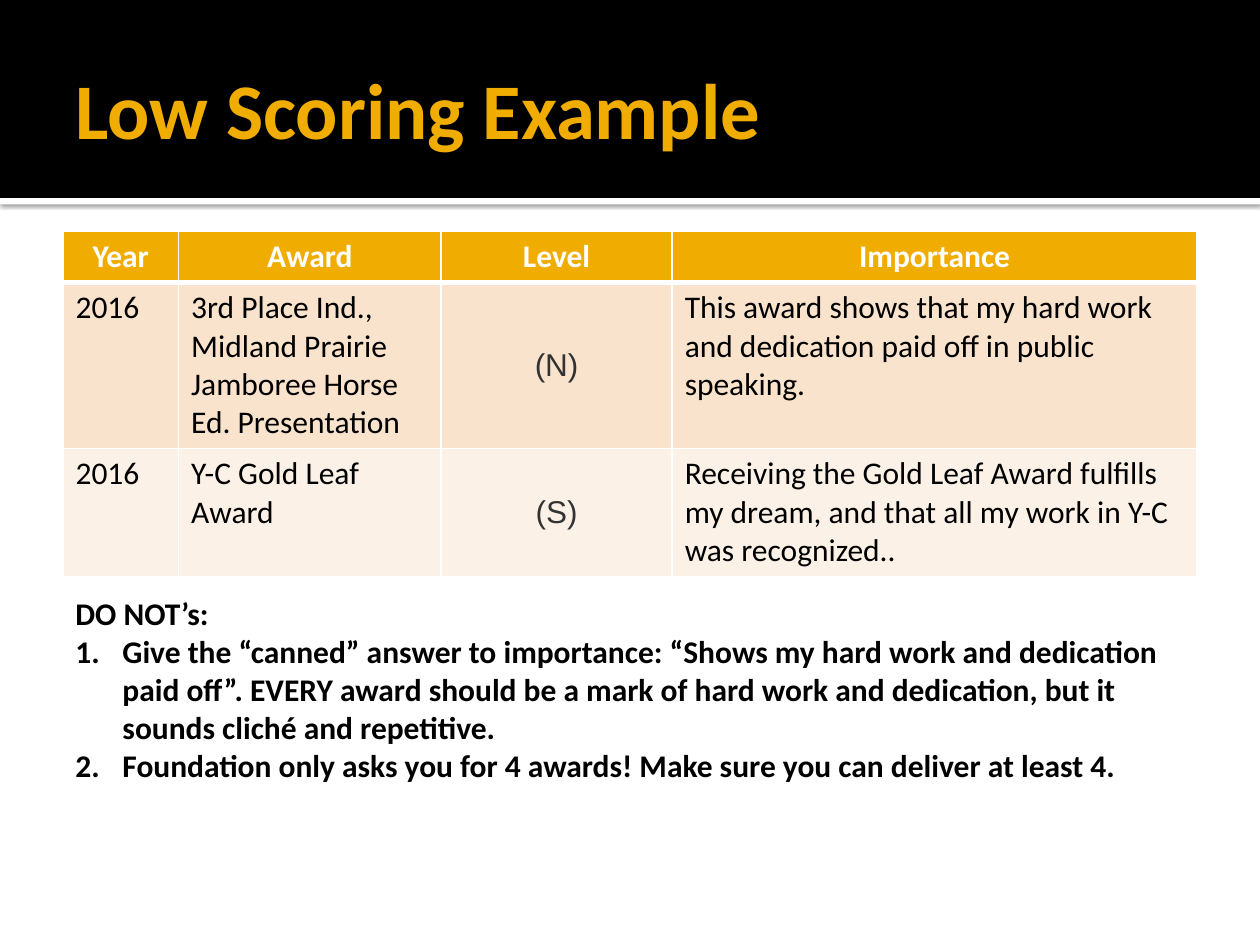
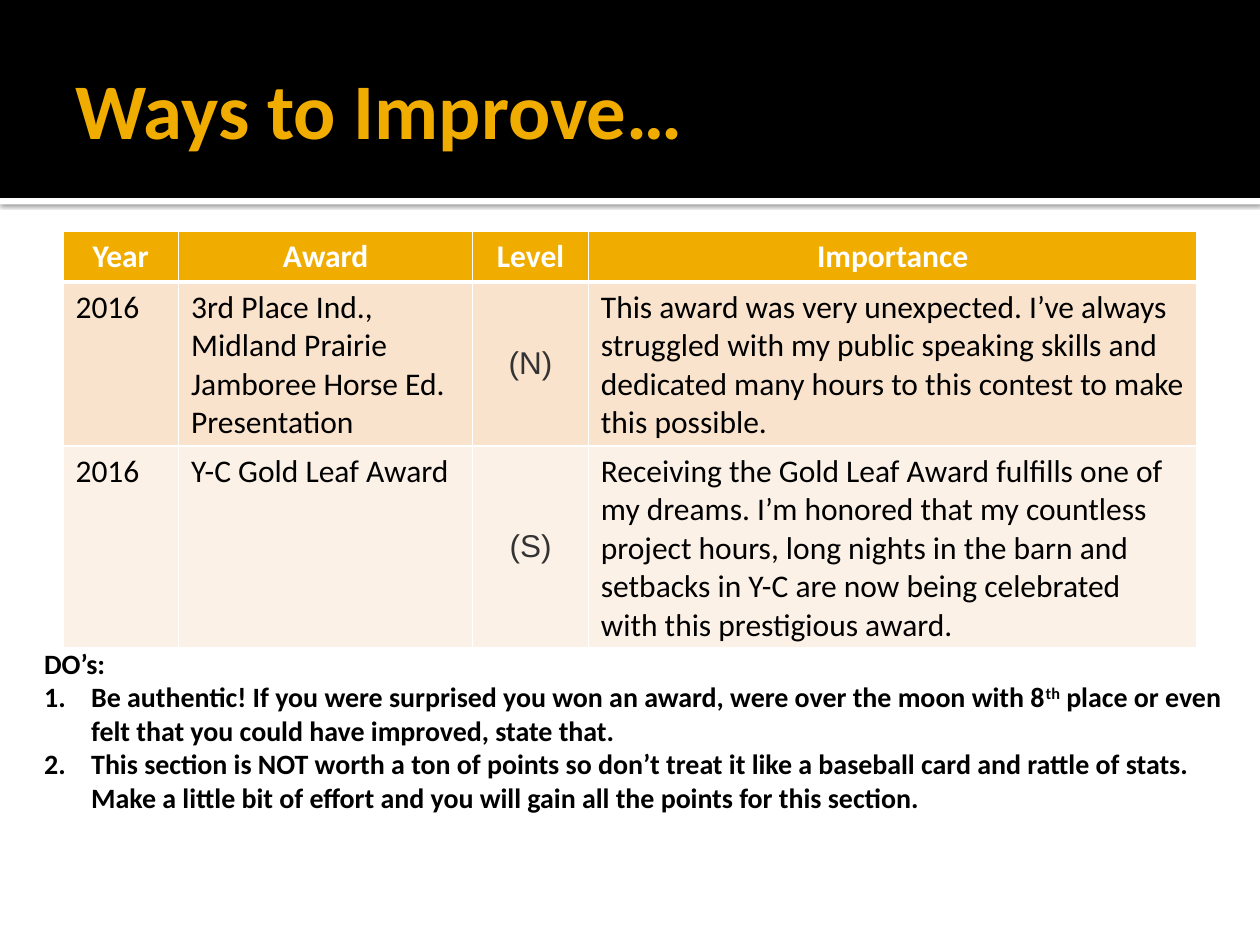
from lxml import etree
from pptx import Presentation
from pptx import util as u
from pptx.dml.color import RGBColor
from pptx.enum import shapes, text
from pptx.oxml import ns

BLACK = RGBColor(0x00, 0x00, 0x00)
WHITE = RGBColor(0xFF, 0xFF, 0xFF)
GOLD = RGBColor(0xF0, 0xAD, 0x00)
GREY = RGBColor(0x33, 0x33, 0x33)
ROW_FILLS = (RGBColor(0xF9, 0xE3, 0xCC), RGBColor(0xFC, 0xF1, 0xE7))

SLIDE_WIDTH, SLIDE_HEIGHT = u.Cm(25.4), u.Cm(19.05)
MARGIN, CONTENT_WIDTH = u.Cm(1.27), u.Cm(22.86)
BAND_HEIGHT, STRIP_HEIGHT = u.Cm(3.99), u.Cm(0.13)
TABLE_TOP = u.Cm(4.67)
LIST_INDENT = u.Cm(0.95)

HEADINGS = ("Year", "Award", "Level", "Importance")
AWARDS = (
    ("2016", "3rd Place Ind., Midland Prairie Jamboree Horse Ed. Presentation", "(N)"),
    ("2016", "Y-C Gold Leaf Award", "(S)"),
)


def add_xml(parent, tag, **attributes):
    """Append a DrawingML element and return it."""
    return etree.SubElement(parent, ns.qn(tag), attributes)


def add_run(paragraph, content, size, color, bold=False, font="Calibri", raised=False):
    """Add one formatted run, raised for a superscript."""
    run = paragraph.add_run()
    run.text = content
    run.font.name = font
    run.font.size = u.Pt(size)
    run.font.bold = bold
    run.font.color.rgb = color
    if raised:
        run._r.get_or_add_rPr().set("baseline", "30000")


def add_band(slide, top, height, color):
    """Add a plain full-width rectangle."""
    band = slide.shapes.add_shape(
        shapes.MSO_SHAPE.RECTANGLE, 0, top, SLIDE_WIDTH, height)
    band.shadow.inherit = False
    band.fill.solid()
    band.fill.fore_color.rgb = color
    band.line.fill.background()
    return band


def add_drop_shadow(shape):
    """Cast a soft shadow straight down."""
    effects = shape._element.spPr.find(ns.qn("a:effectLst"))
    shadow = add_xml(effects, "a:outerShdw", blurRad=str(u.Pt(2.5)),
                     dist=str(u.Pt(0.8)), dir="5400000", algn="t", rotWithShape="0")
    color = add_xml(shadow, "a:srgbClr", val=str(BLACK))
    add_xml(color, "a:alpha", val="60000")


def add_text_frame(slide, left, top, width, height):
    """Add a wrapping text box and return its text frame."""
    frame = slide.shapes.add_textbox(left, top, width, height).text_frame
    frame.word_wrap = True
    return frame


def add_header(slide, title):
    """Add the black band, the shadowed strip and the title."""
    add_drop_shadow(add_band(slide, BAND_HEIGHT, STRIP_HEIGHT, WHITE))
    add_band(slide, 0, BAND_HEIGHT, BLACK)
    frame = add_text_frame(slide, MARGIN, u.Cm(0.43), CONTENT_WIDTH, u.Cm(3.48))
    frame.vertical_anchor = text.MSO_ANCHOR.MIDDLE
    frame.margin_right = u.Cm(0.13)
    add_run(frame.paragraphs[0], title, 45, GOLD, bold=True)


def set_borders(cell, top, bottom):
    """Draw white borders with the given top and bottom widths in points."""
    properties = cell._tc.get_or_add_tcPr()
    for side, width in (("L", 1), ("R", 1), ("T", top), ("B", bottom)):
        line = add_xml(properties, f"a:ln{side}", w=str(u.Pt(width)))
        add_xml(add_xml(line, "a:solidFill"), "a:srgbClr", val=str(WHITE))


def fill_cell(cell, content, row, column):
    """Write and style one cell according to its place in the table."""
    is_heading = row == 0
    is_level = not is_heading and column == HEADINGS.index("Level")
    set_borders(cell, top=3 if row == 1 else 1, bottom=3 if is_heading else 1)
    cell.fill.solid()
    cell.fill.fore_color.rgb = GOLD if is_heading else ROW_FILLS[(row - 1) % 2]
    paragraph = cell.text_frame.paragraphs[0]
    if is_heading or is_level:
        cell.vertical_anchor = text.MSO_ANCHOR.MIDDLE
        paragraph.alignment = text.PP_ALIGN.CENTER
    color = WHITE if is_heading else GREY if is_level else BLACK
    add_run(paragraph, content, 18, color, is_heading, "Arial" if is_level else "Calibri")


def add_award_table(slide, column_widths, row_heights, importance):
    """Add the awards with the reason each one matters."""
    rows = [HEADINGS] + [(*award, reason) for award, reason in zip(AWARDS, importance)]
    table = slide.shapes.add_table(
        len(rows), len(HEADINGS), MARGIN, TABLE_TOP, CONTENT_WIDTH,
        u.Cm(sum(row_heights))).table
    for column, width in zip(table.columns, column_widths):
        column.width = u.Cm(width)
    for table_row, height in zip(table.rows, row_heights):
        table_row.height = u.Cm(height)
    for row, contents in enumerate(rows):
        for column, content in enumerate(contents):
            fill_cell(table.cell(row, column), content, row, column)


def add_advice(slide, box, size, heading, items):
    """Add a bold heading and numbered items, each a list of runs."""
    frame = add_text_frame(slide, *map(u.Cm, box))
    add_run(frame.paragraphs[0], heading, size, BLACK, bold=True)
    for item in items:
        paragraph = frame.add_paragraph()
        properties = paragraph._p.get_or_add_pPr()
        properties.set("marL", str(LIST_INDENT))
        properties.set("indent", str(-LIST_INDENT))
        add_xml(properties, "a:buFont", typeface="+mj-lt")
        add_xml(properties, "a:buAutoNum", type="arabicPeriod")
        for content in item:
            add_run(paragraph, content, size, BLACK, bold=True, raised=content == "th")


def add_slide(presentation, title):
    """Add a blank slide with the shared header."""
    slide = presentation.slides.add_slide(presentation.slide_layouts[6])
    add_header(slide, title)
    return slide


def main():
    """Build and save both slides."""
    presentation = Presentation()
    presentation.slide_width, presentation.slide_height = SLIDE_WIDTH, SLIDE_HEIGHT

    slide = add_slide(presentation, "Low Scoring Example")
    add_award_table(slide, (2.33, 5.29, 4.66, 10.58), (1.02, 3.35, 2.58), (
        "This award shows that my hard work and dedication paid off in public speaking.",
        "Receiving the Gold Leaf Award fulfills my dream, and that all my work in Y-C "
        "was recognized..",
    ))
    add_advice(slide, (1.27, 11.86, 22.86, 4.11), 18, "DO NOT’s:", (
        ["Give the “canned” answer to importance: “Shows my hard work and dedication "
         "paid off”. EVERY award should be a mark of hard work and dedication, but it "
         "sounds cliché and repetitive."],
        ["Foundation only asks you for 4 awards! Make sure you can deliver at least 4."],
    ))

    slide = add_slide(presentation, "Ways to Improve…")
    add_award_table(slide, (2.33, 5.93, 2.33, 12.27), (0.99, 3.3, 4.04), (
        "This award was very unexpected. I’ve always struggled with my public speaking "
        "skills and dedicated many hours to this contest to make this possible.",
        "Receiving the Gold Leaf Award fulfills one of my dreams. I’m honored that my "
        "countless project hours, long nights in the barn and setbacks in Y-C are now "
        "being celebrated with this prestigious award.",
    ))
    add_advice(slide, (0.64, 12.9, 24.33, 4.37), 16, "DO’s:", (
        ["Be authentic! If you were surprised you won an award, were over the moon with 8",
         "th",
         " place or even felt that you could have improved, state that."],
        ["This section is NOT worth a ton of points so don’t treat it like a baseball "
         "card and rattle of stats. Make a little bit of effort and you will gain all "
         "the points for this section."],
    ))

    presentation.save("out.pptx")


if __name__ == "__main__":
    main()
